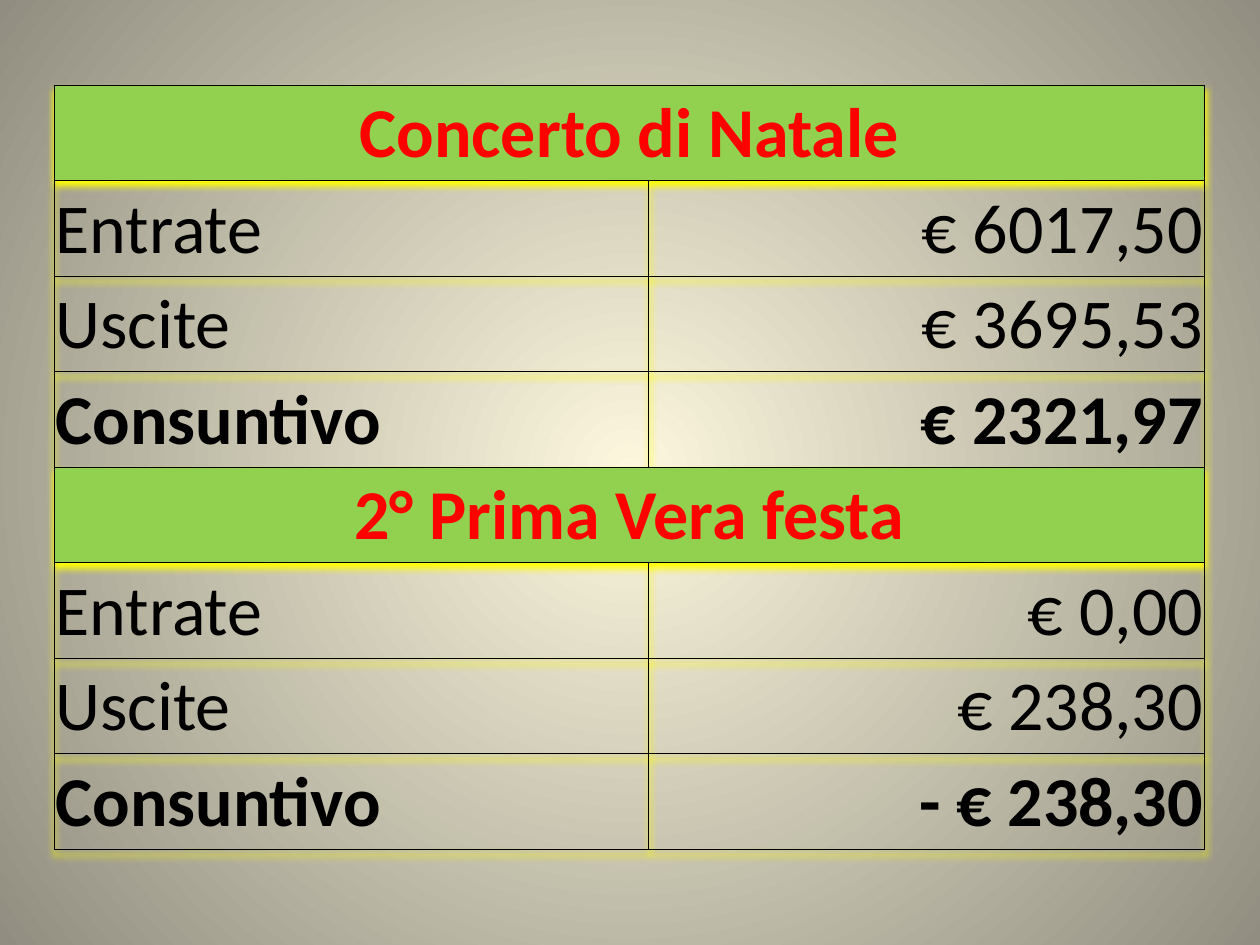
from dataclasses import dataclass

from lxml.etree import SubElement as Sub
from pptx import Presentation
from pptx.dml.color import RGBColor
from pptx.enum.text import MSO_ANCHOR as Anchor, PP_ALIGN as Align
from pptx.oxml.ns import qn
from pptx.table import Table, _Cell as Cell
from pptx.util import Cm, Pt

BLACK = RGBColor(0x00, 0x00, 0x00)
RED = RGBColor(0xFF, 0x00, 0x00)
GREEN = RGBColor(0x92, 0xD0, 0x50)
GOLD = RGBColor(0xFF, 0xFF, 0x00)
CREAM = RGBColor(0xFC, 0xF7, 0xDD)
STONE = RGBColor(0x91, 0x8E, 0x81)
PLAIN = "{2D5ABB26-0587-4C30-8999-92F81FD0307C}"
WIDTHS = (Cm(11.99), Cm(11.2))
ROW = Cm(1.925)


@dataclass
class Event:
    """An event with its income, costs and balance."""
    name: str
    gain: str
    cost: str
    net: str


EVENTS = (
    Event("Concerto di Natale", "€ 6017,50", "€ 3695,53", "€ 2321,97"),
    Event("2° Prima Vera festa", "€ 0,00", "€ 238,30", "- € 238,30"),
)


def paint(slide) -> None:
    """Give the slide a round gradient."""
    fill = slide.background.fill
    fill.gradient()
    for stop, color in zip(fill.gradient_stops, (CREAM, STONE)):
        stop.color.rgb = color
    grad = next(slide.element.iter(qn("a:gradFill")))
    grad.remove(grad.find(qn("a:lin")))
    ring = Sub(grad, qn("a:path"), path="circle")
    Sub(ring, qn("a:fillToRect"), l="50000", t="50000", r="50000", b="50000")


def shade(table: Table) -> None:
    """Set a plain style and a yellow shadow."""
    props = table._tbl.tblPr
    props.find(qn("a:tableStyleId")).text = PLAIN
    table.first_row = table.horz_banding = False
    glow = Sub(props, qn("a:effectLst"))
    props.insert(0, glow)
    cast = Sub(glow, qn("a:outerShdw"), blurRad=str(Pt(4)), dist=str(Pt(3)),
               dir="5400000", algn="t", rotWithShape="0")
    Sub(cast, qn("a:srgbClr"), val=str(GOLD))


def edge(cell: Cell) -> None:
    """Draw thin black borders round a cell."""
    props = cell._tc.get_or_add_tcPr()
    for side in ("lnL", "lnR", "lnT", "lnB"):
        line = Sub(props, qn(f"a:{side}"), w=str(Pt(0.5)))
        Sub(Sub(line, qn("a:solidFill")), qn("a:srgbClr"), val=str(BLACK))


def write(cell: Cell, text: str, *, align=Align.LEFT, color=BLACK, bold=False) -> None:
    """Put formatted text in a cell."""
    cell.vertical_anchor = Anchor.MIDDLE
    cell.margin_left = cell.margin_right = cell.margin_top = Cm(0.03)
    cell.margin_bottom = 0
    para = cell.text_frame.paragraphs[0]
    para.alignment = align
    run = para.add_run()
    run.text = text
    font = run.font
    font.name, font.size, font.bold = "Calibri", Pt(40), bold
    font.color.rgb = color


def report(table: Table, top: int, event: Event) -> None:
    """Fill the four rows of one event."""
    head = table.cell(top, 0)
    head.merge(table.cell(top, 1))
    head.fill.solid()
    head.fill.fore_color.rgb = GREEN
    write(head, event.name, align=Align.CENTER, color=RED, bold=True)
    lines = (("Entrate", event.gain, False), ("Uscite", event.cost, False),
             ("Consuntivo", event.net, True))
    for row, (label, value, bold) in enumerate(lines, top + 1):
        write(table.cell(row, 0), label, bold=bold)
        write(table.cell(row, 1), value, align=Align.RIGHT, bold=bold)


def main() -> None:
    """Build and save the slide."""
    deck = Presentation()
    deck.slide_width, deck.slide_height = Cm(25.4), Cm(19.05)
    slide = deck.slides.add_slide(deck.slide_layouts[6])
    paint(slide)
    count = 4 * len(EVENTS)
    table = slide.shapes.add_table(count, 2, Cm(1.09), Cm(1.72),
                                   sum(WIDTHS), ROW * count).table
    shade(table)
    for col, width in zip(table.columns, WIDTHS):
        col.width = width
    for cell in table.iter_cells():
        edge(cell)
        cell.fill.background()
    for i, event in enumerate(EVENTS):
        report(table, 4 * i, event)
    deck.save("out.pptx")


if __name__ == "__main__":
    main()
